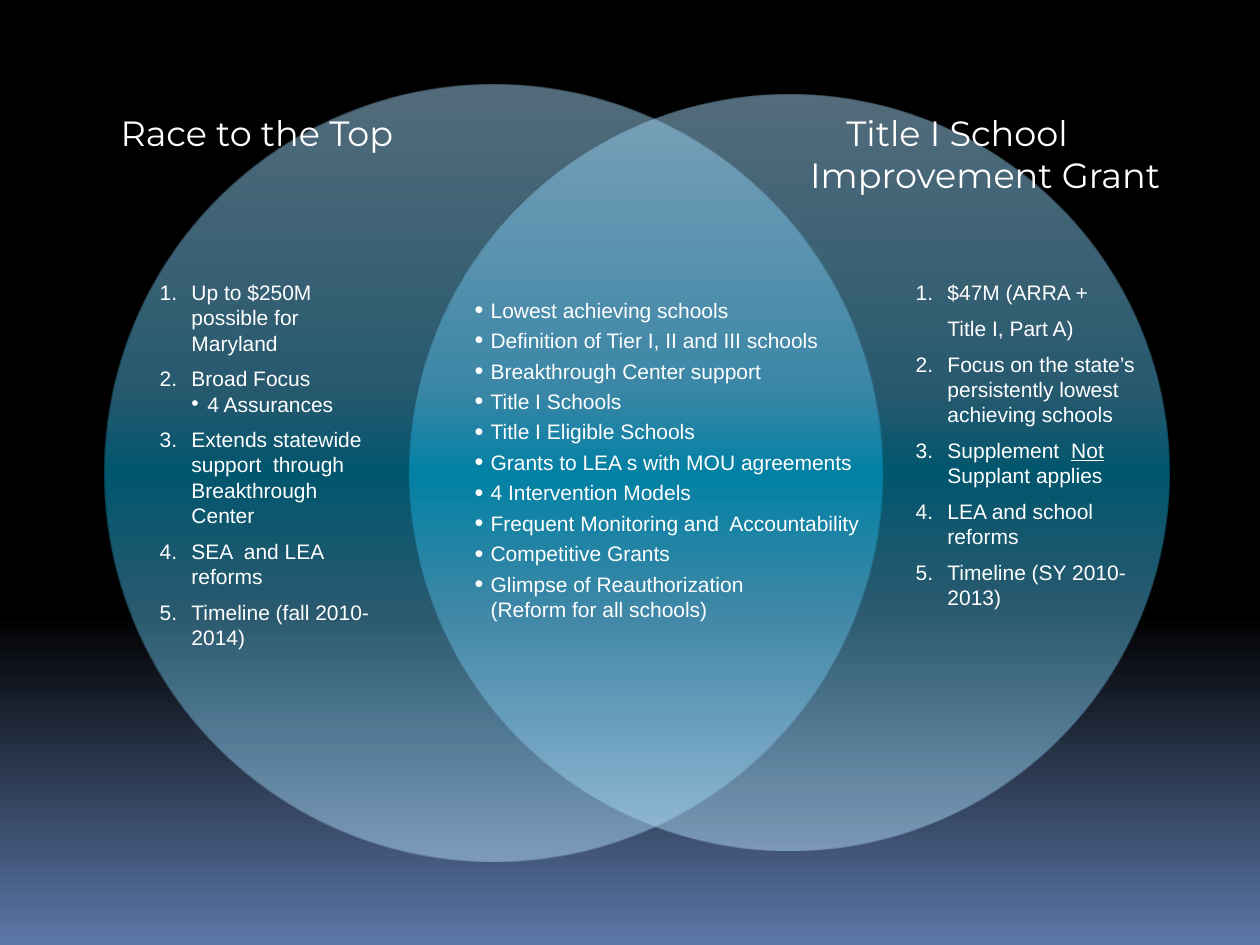
import pptx
import pptx.util
import pptx.dml.color
import pptx.enum.shapes
import pptx.enum.text
from pptx.oxml.ns import qn
from lxml import etree

Cm, Pt = pptx.util.Cm, pptx.util.Pt
Align = pptx.enum.text.PP_ALIGN

HUE = {"text": "FFFFFF", "black": "000000", "dusk": "5B77A8", "pale": "A9D9F7",
       "sky": "4BB3DE", "core": "00ADDC", "blue": "55B5DF", "mist": "B8DEF7"}
NIGHT = [(0, "black"), (65, "black"), (100, "dusk")]
GLASS = [(0, "pale"), (40, "sky"), (50, "core"), (68, "blue"), (100, "mist")]

HEAD = {"size": Pt(20), "name": "Montserrat", "bold": False}
BODY = {"size": Pt(12), "name": "Arial", "bold": False}
FRAME = {"word_wrap": True, "auto_size": pptx.enum.text.MSO_AUTO_SIZE.NONE,
         "vertical_anchor": pptx.enum.text.MSO_ANCHOR.TOP,
         "margin_left": Cm(0.25), "margin_right": Cm(0.25),
         "margin_top": Cm(0.13), "margin_bottom": Cm(0.13)}

# Each item: mark (number, bullet or None), text, level; "_" encloses underlining
LEFT = [(1, "Up to $250M possible for Maryland", 0), (2, "Broad Focus", 0),
        ("•", "4 Assurances", 1),
        (3, "Extends statewide support  through Breakthrough Center", 0),
        (4, "SEA  and LEA reforms", 0), (5, "Timeline (fall 2010-2014)", 0)]
RIGHT = [(1, "$47M (ARRA +", 0), (None, "Title I, Part A)", 0),
         (2, "Focus on the state’s persistently lowest achieving schools", 0),
         (3, "Supplement  _Not_ Supplant applies", 0),
         (4, "LEA and school reforms", 0), (5, "Timeline (SY 2010-2013)", 0)]
SHARED = [("•", text, 0) for text in (
    "Lowest achieving schools", "Definition of Tier I, II and III schools",
    "Breakthrough Center support", "Title I Schools", "Title I Eligible Schools",
    "Grants to LEA s with MOU agreements", "4 Intervention Models",
    "Frequent Monitoring and  Accountability", "Competitive Grants",
    "Glimpse of Reauthorization")] + [(None, "(Reform for all schools)", 0)]


def apply(obj, style):
    for name, value in style.items():
        setattr(obj, name, value)


def place(shape, box):
    apply(shape, dict(zip(("left", "top", "width", "height"), map(Cm, box))))


def shade(fill, root, stops, alpha=100):
    """Give the fill found under root a downward gradient."""
    fill.gradient()
    grad = root.find(".//" + qn("a:gradFill"))
    grad.find(qn("a:lin")).set("ang", "5400000")
    row = grad.find(qn("a:gsLst"))
    for old in list(row):
        row.remove(old)
    for spot, hue in stops:
        stop = etree.SubElement(row, qn("a:gs"), pos=str(spot * 1000))
        tint = etree.SubElement(stop, qn("a:srgbClr"), val=HUE[hue])
        if alpha < 100:
            etree.SubElement(tint, qn("a:alpha"), val=str(alpha * 1000))


def indent(para, left, first):
    props = para._p.get_or_add_pPr()
    props.set("marL", str(Cm(left)))
    props.set("indent", str(Cm(first)))
    return props


def bullet(props, mark, scale):
    if mark is None:
        etree.SubElement(props, qn("a:buNone"))
        return
    etree.SubElement(props, qn("a:buSzPct"), val=str(scale * 1000))
    etree.SubElement(props, qn("a:buFont"), typeface="Arial")
    if isinstance(mark, int):
        etree.SubElement(props, qn("a:buAutoNum"), type="arabicPeriod", startAt=str(mark))
    else:
        etree.SubElement(props, qn("a:buChar"), char=mark)


def write(para, text, style):
    for i, part in enumerate(text.split("_")):
        run = para.add_run()
        run.text = part
        apply(run.font, style)
        run.font.color.rgb = pptx.dml.color.RGBColor.from_string(HUE["text"])
        if i % 2:
            run.font.underline = True


def heading(shape, box, text, align, first):
    place(shape, box)
    apply(shape.text_frame, FRAME)
    para = shape.text_frame.paragraphs[0]
    apply(para, {"alignment": align, "space_before": Pt(0)})
    bullet(indent(para, 0, first), None, 100)
    write(para, text, HEAD)


def listing(shape, box, items, hang, after, scale=100, top=0.13):
    place(shape, box)
    frame = shape.text_frame
    apply(frame, {**FRAME, "margin_top": Cm(top)})
    marks = [mark for mark, _, _ in items] + [0]
    for i, (mark, text, level) in enumerate(items):
        para = frame.paragraphs[0] if i == 0 else frame.add_paragraph()
        # No gap between a line and the sub-point or plain bullet line below it
        tight = (i + 1 < len(items) and items[i + 1][2] > level) or \
                (mark == "•" and marks[i + 1] is None)
        apply(para, {"level": level, "alignment": Align.LEFT, "space_before": Pt(0),
                     "space_after": Pt(0 if tight else after)})
        step = 0.32 if level else hang
        props = indent(para, hang + level * step, -step if mark else 0)
        bullet(props, mark, scale)
        write(para, text, BODY)


def venn(slide, box):
    """Two overlapping circles behind the text."""
    x, y, _, _ = box
    rings = []
    for dx, dy, wide, high in ((0, 0, 15.67, 15.67), (6.15, 0.2, 15.32, 15.24)):
        ring = slide.shapes.add_shape(pptx.enum.shapes.MSO_SHAPE.OVAL, 0, 0, 0, 0)
        place(ring, (x + dx, y + dy, wide, high))
        ring.shadow.inherit = False
        ring.line.fill.background()
        shade(ring.fill, ring._element.spPr, GLASS, 50)
        rings.append(ring)
    group = slide.shapes.add_group_shape(rings)
    slide.shapes._spTree.insert(2, group._element)


def side(box, head, body, title, items, shift, align=Align.LEFT, first=0):
    """Heading on top of the box, numbered list lower down inside it."""
    x, y, wide, high = box
    tall, dx, span = shift
    heading(head, (x, y, wide, tall), title, align, first)
    listing(body, (x + dx, y + 3.4, span, high - 3.4), items, 0.64, 6)


def main():
    deck = pptx.Presentation()
    deck.slide_width, deck.slide_height = Cm(25.4), Cm(19.05)
    slide = deck.slides.add_slide(deck.slide_layouts[4])
    shade(slide.background.fill, slide._element, NIGHT)
    slot = {p.placeholder_format.idx: p for p in slide.placeholders}

    venn(slide, (2.11, 1.7, 21.47, 15.67))
    side((1.27, 2.11, 7.82, 11.17), slot[0], slot[2], "Race to the Top", LEFT,
         (1.12, 1.7, 4.88), align=Align.CENTER)
    side((16.08, 2.11, 8.05, 11.1), slot[1], slot[4],
         "Title I School Improvement Grant", RIGHT, (1.96, 2.13, 5.08), first=0.73)
    # Overlap of both programmes
    listing(slot[3], (9.32, 4.01, 8.26, 9.09), SHARED, 0.32, 3, scale=120, top=1.98)
    deck.save("out.pptx")


if __name__ == "__main__":
    main()
